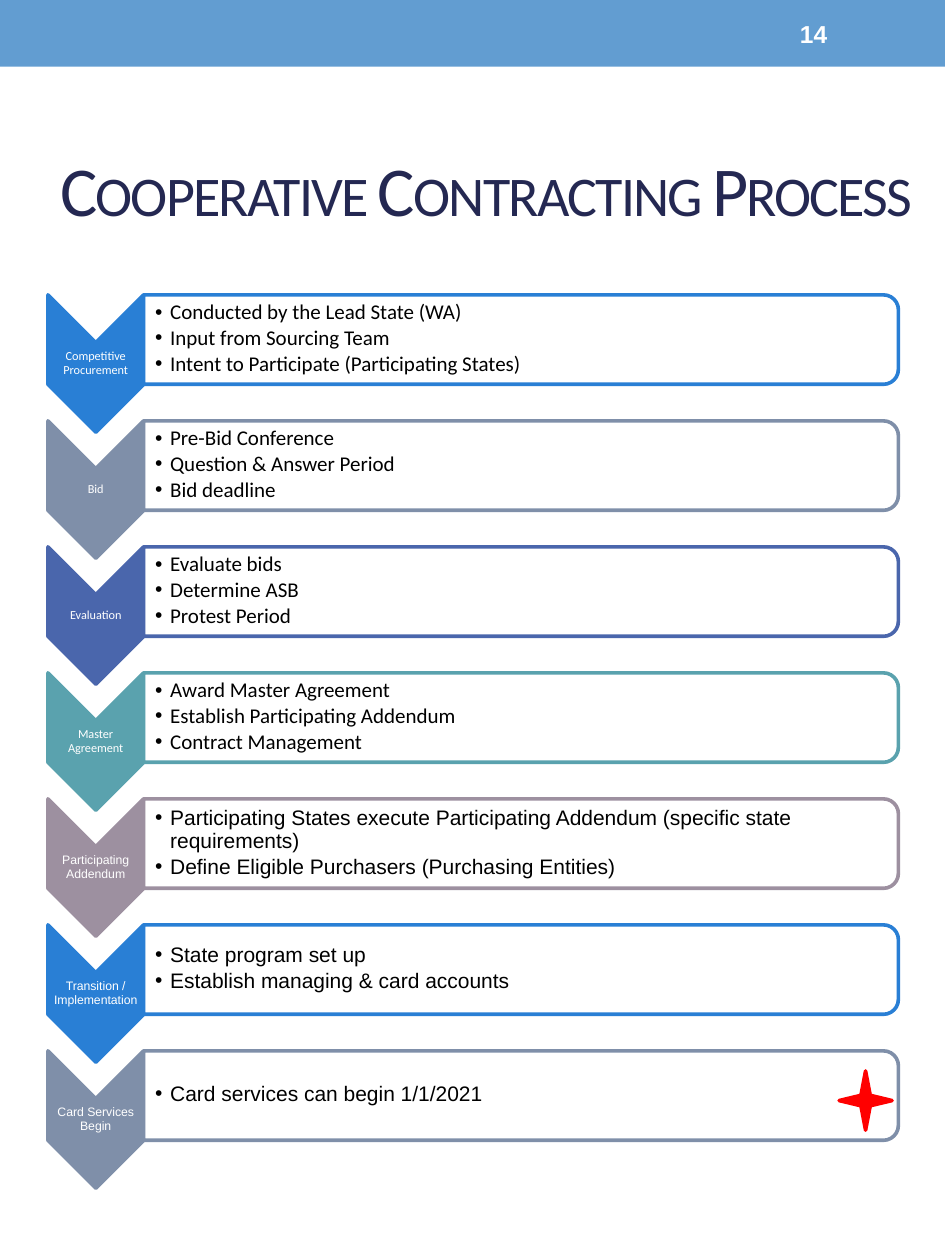
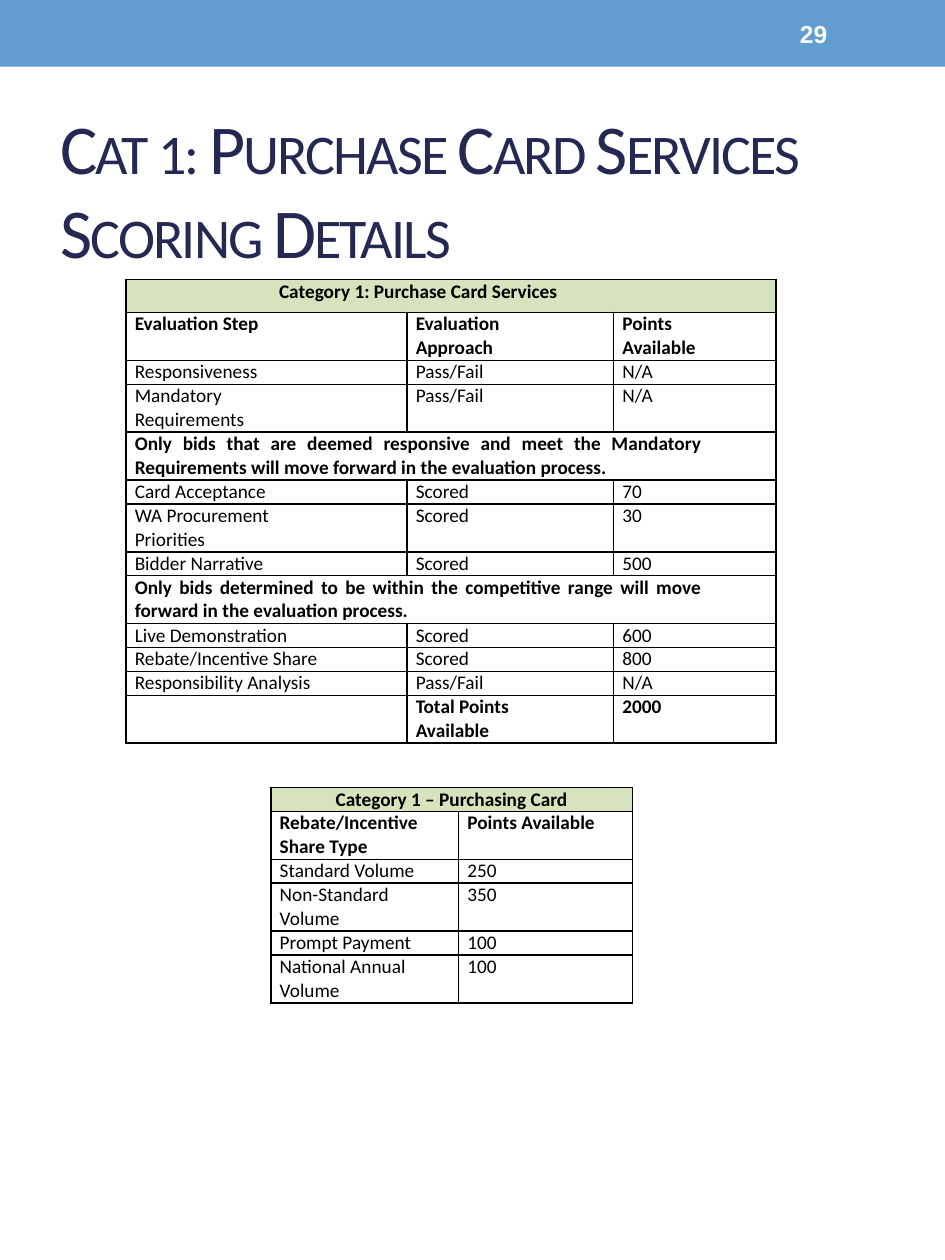
from dataclasses import dataclass

from lxml.etree import SubElement
from pptx import Presentation
from pptx.dml.color import RGBColor
from pptx.enum.shapes import MSO_SHAPE
from pptx.enum.text import MSO_ANCHOR, PP_ALIGN
from pptx.oxml.ns import qn
from pptx.util import Pt

SCALE = 9144  # EMU per px, 100 px to the inch


def px(length):
    return length * SCALE


@dataclass(frozen=True)
class Theme:
    band: str = "629DD1"
    title: str = "242852"
    text: str = "000000"
    white: str = "FFFFFF"
    table_head: str = "D6E3BC"
    star: str = "FF0000"
    blue: str = "297FD5"
    slate: str = "7F8FA9"
    indigo: str = "4A66AC"
    teal: str = "5AA2AE"
    mauve: str = "9D90A0"
    main_font: str = "Calibri"
    plain_font: str = "Arial"
    title_size: int = 40
    number_size: int = 14
    bullet_size: int = 12
    cell_size: int = 11
    label_size: int = 7
    outline: float = 2.08


THEME = Theme()

STEPS = [
    ("Competitive Procurement", THEME.blue, THEME.main_font,
     ["Conducted by the Lead State (WA)", "Input from Sourcing Team",
      "Intent to Participate (Participating States)"]),
    ("Bid", THEME.slate, THEME.main_font,
     ["Pre-Bid Conference", "Question & Answer Period", "Bid deadline"]),
    ("Evaluation", THEME.indigo, THEME.main_font,
     ["Evaluate bids", "Determine ASB", "Protest Period"]),
    ("Master\vAgreement", THEME.teal, THEME.main_font,
     ["Award Master Agreement", "Establish Participating Addendum",
      "Contract Management"]),
    ("Participating Addendum", THEME.mauve, THEME.plain_font,
     ["Participating States execute Participating Addendum "
      "(specific state requirements)",
      "Define Eligible Purchasers (Purchasing Entities)"]),
    ("Transition / Implementation", THEME.blue, THEME.plain_font,
     ["State program set up", "Establish managing & card accounts"]),
    ("Card Services Begin", THEME.slate, THEME.plain_font,
     ["Card services can begin 1/1/2021"]),
]

SCORING = [
    ["Category 1: Purchase Card Services"],
    ["Evaluation Step", "Evaluation Approach", "Points Available"],
    ["Responsiveness", "Pass/Fail", "N/A"],
    ["Mandatory Requirements", "Pass/Fail", "N/A"],
    ["Only bids that are deemed responsive and meet the Mandatory "
     "Requirements will move forward in the evaluation process."],
    ["Card Acceptance", "Scored", "70"],
    ["WA Procurement Priorities", "Scored", "30"],
    ["Bidder Narrative", "Scored", "500"],
    ["Only bids determined to be within the competitive range will move "
     "forward in the evaluation process."],
    ["Live Demonstration", "Scored", "600"],
    ["Rebate/Incentive Share", "Scored", "800"],
    ["Responsibility Analysis", "Pass/Fail", "N/A"],
    ["", "Total Points Available", "2000"],
]
SCORING_HEIGHTS = [26, 38, 19, 38, 38, 19, 38, 19, 38, 19, 19, 19, 38]

REBATE = [
    ["Category 1 – Purchasing Card"],
    ["Rebate/Incentive Share Type", "Points Available"],
    ["Standard Volume", "250"],
    ["Non-Standard Volume", "350"],
    ["Prompt Payment", "100"],
    ["National Annual Volume", "100"],
]
REBATE_HEIGHTS = [19, 38, 19, 38, 19, 38]


class SlideBuilder:
    def __init__(self, deck, theme):
        self.deck = deck
        self.theme = theme
        self.page = None

    def new_page(self, title, number):
        theme = self.theme
        self.page = self.deck.slides.add_slide(self.deck.slide_layouts[6])
        self.shape(MSO_SHAPE.RECTANGLE, 0, 0, 750, 53, theme.band)
        box = self.text(title, 38, 78, 700, 144, theme.main_font,
                        theme.title_size, theme.title, insets=(10, 5, 0, 5))
        for span in box.text_frame.paragraphs[0].runs:
            properties = span.font._element
            properties.set("cap", "small")
            properties.set("spc", "-100")
        self.text(number, 625, 3, 88, 48, theme.plain_font,
                  theme.number_size, theme.white, bold=True)

    def shape(self, kind, left, top, width, height, fill, line=None):
        shape = self.page.shapes.add_shape(
            kind, px(left), px(top), px(width), px(height))
        shape.shadow.inherit = False
        shape.fill.solid()
        shape.fill.fore_color.rgb = RGBColor.from_string(fill)
        if line:
            shape.line.color.rgb = RGBColor.from_string(line)
            shape.line.width = Pt(self.theme.outline)
        else:
            shape.line.fill.background()
        return shape

    def turned_shape(self, kind, left, top, width, height, fill, line):
        """Place a shape turned by 90 degrees; the box given is the one seen."""
        shift = (width - height) / 2
        shape = self.shape(kind, left, top, height, width, fill, line)
        shape.left = round(px(left + shift))
        shape.top = round(px(top - shift))
        shape.rotation = 90
        return shape

    def style(self, paragraph, font, size, color, bold=False):
        for span in paragraph.runs:
            span.font.name = font
            span.font.size = Pt(size)
            span.font.bold = bold
            span.font.color.rgb = RGBColor.from_string(color)

    def text(self, content, left, top, width, height, font, size, color,
             bold=False, align=PP_ALIGN.LEFT, insets=(10, 5, 10, 5), spacing=1):
        box = self.page.shapes.add_textbox(
            px(left), px(top), px(width), px(height))
        frame = box.text_frame
        frame.word_wrap = True
        frame.vertical_anchor = MSO_ANCHOR.MIDDLE
        (frame.margin_left, frame.margin_top,
         frame.margin_right, frame.margin_bottom) = map(px, insets)
        frame.text = content
        for paragraph in frame.paragraphs:
            paragraph.alignment = align
            paragraph.line_spacing = spacing
            self.style(paragraph, font, size, color, bold)
        return box

    def bullets(self, items, left, top, width, height, font):
        theme = self.theme
        box = self.text("\n".join(items), left, top, width, height, font,
                        theme.bullet_size, theme.text,
                        insets=(9, 1, 1, 1), spacing=0.9)
        for paragraph in box.text_frame.paragraphs:
            paragraph.space_after = Pt(1.8)
            properties = paragraph._p.get_or_add_pPr()
            properties.set("marL", str(px(12)))
            properties.set("indent", str(px(-12)))
            SubElement(properties, qn("a:buFont"), typeface="Arial")
            SubElement(properties, qn("a:buChar"), char="•")

    def step(self, top, label, color, font, items):
        theme = self.theme
        self.turned_shape(MSO_SHAPE.CHEVRON, 38, top, 76, 109, color, color)
        self.text(label, 38, top + 38, 76, 33, font, theme.label_size,
                  theme.white, align=PP_ALIGN.CENTER, insets=(0, 0, 0, 0),
                  spacing=0.9)
        panel = self.turned_shape(MSO_SHAPE.ROUND_2_SAME_RECTANGLE, 114, top,
                                  599, 71, theme.white, color)
        fill = panel._element.spPr.find(qn("a:solidFill"))
        SubElement(fill[0], qn("a:alpha"), val="90000")
        self.bullets(items, 114, top + 3, 595, 64, font)

    def borders(self, cell):
        properties = cell._tc.get_or_add_tcPr()
        for side in ("a:lnL", "a:lnR", "a:lnT", "a:lnB"):
            line = SubElement(properties, qn(side), w=str(Pt(1)))
            fill = SubElement(line, qn("a:solidFill"))
            SubElement(fill, qn("a:srgbClr"), val=self.theme.text)

    def table(self, rows, left, top, widths, heights, right_indent=0):
        """Draw rows; a row with a single text spans the whole table."""
        table = self.page.shapes.add_table(
            len(rows), len(widths), px(left), px(top),
            px(sum(widths)), px(sum(heights))).table
        table.first_row = table.horz_banding = False
        for column, width in zip(table.columns, widths):
            column.width = px(width)
        for index, (texts, height) in enumerate(zip(rows, heights)):
            table.rows[index].height = px(height)
            spans_table = len(texts) == 1
            bold = index < 2 or spans_table or not texts[0]
            for column in range(len(widths)):
                cell = table.cell(index, column)
                self.borders(cell)
                if index == 0:
                    cell.fill.solid()
                    cell.fill.fore_color.rgb = RGBColor.from_string(
                        self.theme.table_head)
                else:
                    cell.fill.background()
            if spans_table:
                table.cell(index, 0).merge(table.cell(index, len(widths) - 1))
            for column, content in enumerate(texts):
                self.fill_cell(table.cell(index, column), content, bold,
                               right_indent)
                if spans_table:
                    table.cell(index, 0).text_frame.paragraphs[0].alignment = (
                        PP_ALIGN.JUSTIFY if index else PP_ALIGN.CENTER)

    def fill_cell(self, cell, content, bold, right_indent):
        cell.margin_left = cell.margin_right = px(7)
        cell.margin_top = cell.margin_bottom = 0
        cell.text_frame.text = content
        paragraph = cell.text_frame.paragraphs[0]
        paragraph.alignment = PP_ALIGN.LEFT
        paragraph._p.get_or_add_pPr().set("marR", str(px(right_indent)))
        self.style(paragraph, self.theme.main_font, self.theme.cell_size,
                   self.theme.text, bold)


def main():
    deck = Presentation()
    deck.slide_width, deck.slide_height = px(750), px(1000)
    builder = SlideBuilder(deck, THEME)

    builder.new_page("Cooperative Contracting Process", "14")
    for index, step in enumerate(STEPS):
        builder.step(234 + 100 * index, *step)
    builder.shape(MSO_SHAPE.STAR_4_POINT, 666, 850, 42, 47,
                  THEME.star, THEME.star)

    builder.new_page("Cat 1: Purchase Card Services\vScoring Details", "29")
    builder.table(SCORING, 100, 222, [223, 164, 129], SCORING_HEIGHTS,
                  right_indent=52)
    builder.table(REBATE, 215, 625, [149, 138], REBATE_HEIGHTS)

    deck.save("out.pptx")


if __name__ == "__main__":
    main()
